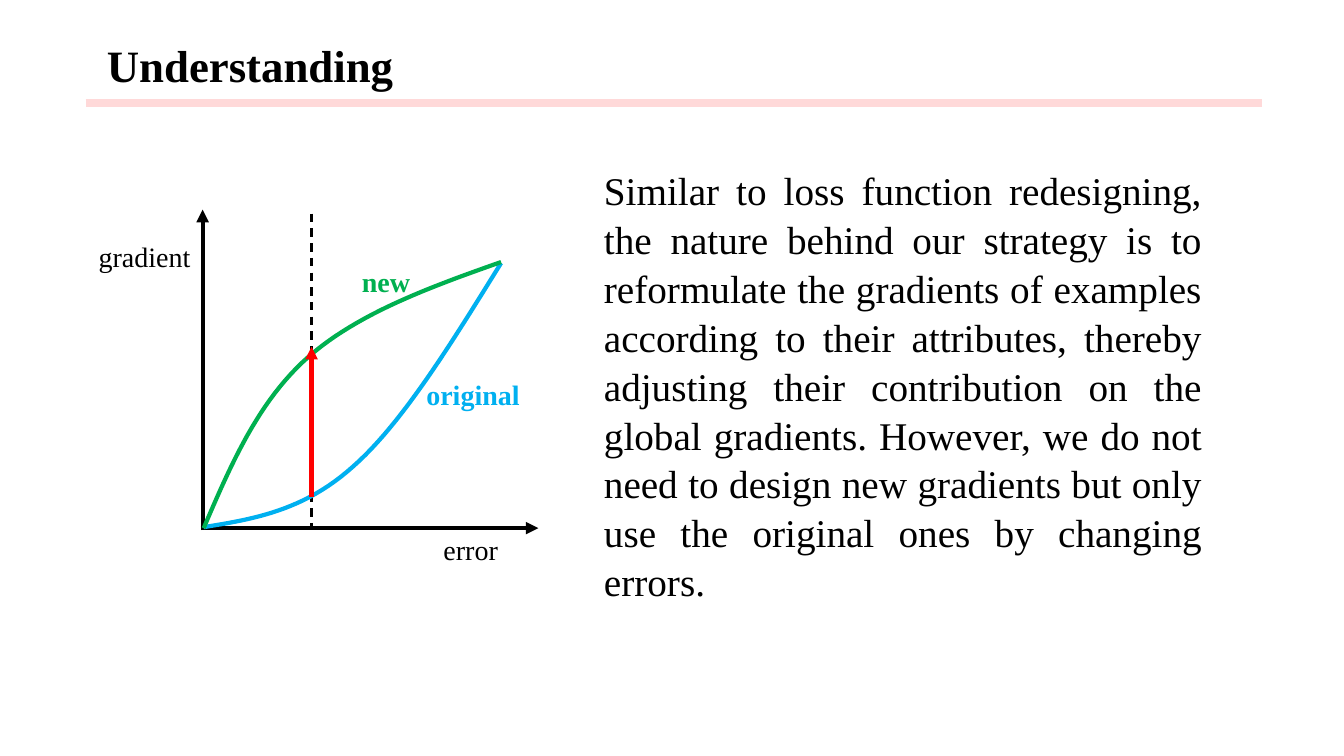
from pptx import Presentation
from pptx.dml.color import RGBColor
from pptx.enum.dml import MSO_LINE
from pptx.enum.shapes import MSO_CONNECTOR
from pptx.enum.text import MSO_ANCHOR, MSO_AUTO_SIZE, PP_ALIGN
from pptx.oxml.ns import qn
from pptx.util import Pt
from lxml import etree

PX = 9144  # 100 px to the inch
FONT = "Times New Roman"
STRAIGHT = MSO_CONNECTOR.STRAIGHT
DASH = MSO_LINE.DASH
TOP = MSO_ANCHOR.TOP
FIXED = MSO_AUTO_SIZE.NONE
LEFT, JUSTIFY = PP_ALIGN.LEFT, PP_ALIGN.JUSTIFY

BLACK, PINK, RED = "000000", "FFD9D9", "FF0000"
BLUE, GREEN = "00B0F0", "00B050"
STEPS = 24

BODY = (
    "Similar to loss function redesigning, the nature behind our strategy is to "
    "reformulate the gradients of examples according to their attributes, thereby "
    "adjusting their contribution on the global gradients. However, we do not need "
    "to design new gradients but only use the original ones by changing errors."
)


def paint(target, color):
    target.rgb = RGBColor.from_string(color)


def place(shape, box):
    shape.left, shape.top, shape.width, shape.height = (v * PX for v in box)


def write(shape, text, size, color=BLACK, bold=False, align=LEFT):
    frame = shape.text_frame
    frame.word_wrap = True
    frame.auto_size = FIXED
    frame.vertical_anchor = TOP
    frame.text = text
    para = frame.paragraphs[0]
    para.alignment = align
    para.space_before = Pt(0)
    font = para.font
    font.name, font.size, font.bold = FONT, Pt(size), bold
    paint(font.color, color)
    return para


def label(slide, box, text, color=BLACK, bold=False):
    shape = slide.shapes.add_textbox(*(v * PX for v in box))
    write(shape, text, 20, color, bold)


def rule(slide, start, end, color, width, dash=None, arrow=False):
    ends = (v * PX for v in (*start, *end))
    line = slide.shapes.add_connector(STRAIGHT, *ends)
    paint(line.line.color, color)
    line.line.width = Pt(width)
    if dash:
        line.line.dash_style = dash
    props = line._element.spPr
    if arrow:
        etree.SubElement(props.find(qn("a:ln")), qn("a:tailEnd"), type="triangle")
    etree.SubElement(props, qn("a:effectLst"))


def bezier(a, b, c, d):
    """Return points along one cubic curve, without its start."""
    points = []
    for step in range(1, STEPS + 1):
        t = step / STEPS
        u = 1 - t
        weights = (u**3, 3 * u * u * t, 3 * u * t * t, t**3)
        points.append(tuple(
            round(PX * sum(w * p[axis] for w, p in zip(weights, (a, b, c, d))))
            for axis in (0, 1)
        ))
    return points


def curve(slide, left, top, knots, color):
    knots = [(left + x, top + y) for x, y in knots]
    pen = slide.shapes.build_freeform(*(v * PX for v in knots[0]))
    for first in range(0, len(knots) - 1, 3):
        pen.add_line_segments(bezier(*knots[first:first + 4]), close=False)
    shape = pen.convert_to_shape()
    shape.shadow.inherit = False
    shape.fill.background()
    paint(shape.line.color, color)
    shape.line.width = Pt(3)


def heading(slide, left, top, width):
    rule(slide, (left, top + 70), (left + width, top + 70), PINK, 6)
    title = slide.shapes.title
    place(title, (left + 11, top, 306, 64))
    write(title, "Understanding", 32, bold=True)


def graph(slide, left, top, width, height):
    """Draw the axes, both gradient curves and the shift between them."""
    base = top + height
    mid = left + 108
    rule(slide, (left, base + 2), (left, top), BLACK, 3, arrow=True)
    rule(slide, (left - 2, base), (left + width, base), BLACK, 3, arrow=True)
    rule(slide, (mid, top + 4), (mid, base + 2), BLACK, 1.5, dash=DASH)

    label(slide, (left + 229, base - 1, 120, 44), "error")
    label(slide, (left + 212, top + 162, 154, 44), "original", BLUE, True)
    label(slide, (left + 148, top + 50, 77, 44), "new", GREEN, True)

    old = [(1, 315), (50, 307), (100, 299), (149, 255),
           (198, 212), (247, 132), (296, 53)]
    new = [(1, 316), (28, 253), (55, 190), (105, 146),
           (154, 103), (225, 77), (296, 52)]
    curve(slide, left, top, old, BLUE)
    curve(slide, left, top, new, GREEN)
    rule(slide, (mid, top + 285), (mid, top + 136), RED, 3, arrow=True)
    label(slide, (left - 113, top + 25, 120, 44), "gradient")


def prose(slide, *box):
    body = slide.placeholders[1]
    place(body, box)
    para = write(body, BODY, 28, align=JUSTIFY)
    para.line_spacing = 1.04
    props = para._p.get_or_add_pPr()
    props.set("marL", "0")
    props.set("indent", "0")
    bullet = etree.Element(qn("a:buNone"))
    props.find(qn("a:defRPr")).addprevious(bullet)


def main():
    deck = Presentation()
    deck.slide_width, deck.slide_height = 1333 * PX, 750 * PX
    slide = deck.slides.add_slide(deck.slide_layouts[1])
    heading(slide, 85, 32, 1167)
    graph(slide, 201, 208, 333, 316)
    prose(slide, 589, 158, 613, 434)
    deck.save("out.pptx")


if __name__ == "__main__":
    main()
